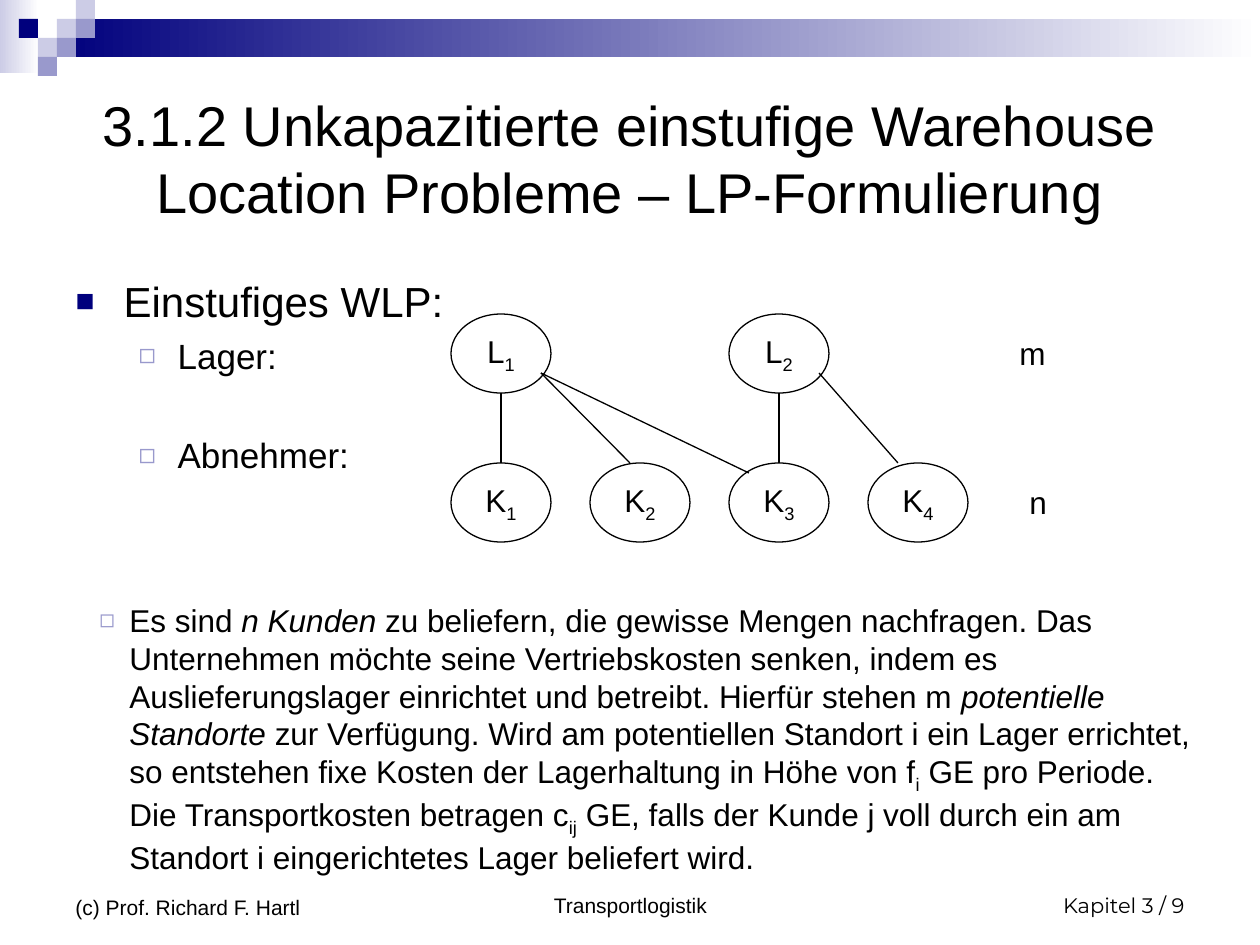
from dataclasses import dataclass

from lxml.etree import SubElement
from pptx import Presentation
from pptx.dml.color import RGBColor
from pptx.enum.shapes import MSO_CONNECTOR, MSO_SHAPE
from pptx.enum.text import MSO_ANCHOR, MSO_AUTO_SIZE, PP_ALIGN
from pptx.oxml.ns import qn
from pptx.util import Emu, Pt


@dataclass(frozen=True)
class Theme:
    navy: str = "00007D"
    violet: str = "9999CC"
    lilac: str = "CCCCE6"
    white: str = "FFFFFF"
    ink: str = "000000"
    font: str = "Arial"
    number_font: str = "Montserrat"
    title: int = 32
    level_1: int = 24
    level_2: int = 20
    text: int = 18
    footer: int = 12
    line: float = 0.75


THEME = Theme()
PX_PER_INCH = 126
SQUARE = ("■", THEME.navy, 75)
HOLLOW = ("◻", THEME.violet, 80)


def px(value):
    return Emu(round(value * 914400 / PX_PER_INCH))


def color(code):
    return RGBColor.from_string(code)


def place(shape, box):
    for name, value in zip(("left", "top", "width", "height"), box):
        setattr(shape, name, px(value))


def format_frame(frame, **values):
    """Set text frame attributes over the common defaults."""
    defaults = {"word_wrap": True, "auto_size": MSO_AUTO_SIZE.NONE}
    for name, value in (defaults | values).items():
        setattr(frame, name, value)


def write(paragraph, parts, size, font=THEME.font, align=PP_ALIGN.LEFT, before=0):
    """Fill a paragraph from (text, style) parts; style is "", "italic" or "sub"."""
    paragraph.alignment = align
    paragraph.space_before = Pt(before)
    for text, style in parts:
        run = paragraph.add_run()
        run.text = text
        values = {"name": font, "size": Pt(size), "italic": style == "italic"}
        for name, value in values.items():
            setattr(run.font, name, value)
        run.font.color.rgb = color(THEME.ink)
        if style == "sub":
            run._r.get_or_add_rPr().set("baseline", "-25000")


def set_bullet(paragraph, bullet, margin, hanging):
    character, code, percent = bullet
    properties = paragraph._p.get_or_add_pPr()
    properties.set("marL", str(px(margin)))
    properties.set("indent", str(px(-hanging)))
    bullet_color = SubElement(properties, qn("a:buClr"))
    SubElement(bullet_color, qn("a:srgbClr"), val=code)
    SubElement(properties, qn("a:buSzPct"), val=str(percent * 1000))
    SubElement(properties, qn("a:buFont"), typeface=THEME.font)
    SubElement(properties, qn("a:buChar"), char=character)


def add_label(slide, box, text, size, font=THEME.font, align=PP_ALIGN.LEFT, **frame_values):
    shape = slide.shapes.add_textbox(*map(px, box))
    format_frame(shape.text_frame, **frame_values)
    write(shape.text_frame.paragraphs[0], [(text, "")], size, font, align)


def add_block(slide, box, *codes):
    """Add a borderless rectangle: one colour is solid, two make a gradient."""
    block = slide.shapes.add_shape(MSO_SHAPE.RECTANGLE, *map(px, box))
    block.shadow.inherit = False
    block.line.fill.background()
    if len(codes) == 1:
        block.fill.solid()
        block.fill.fore_color.rgb = color(codes[0])
        return
    block.fill.gradient()
    block.fill.gradient_angle = 0
    for stop, code in zip(block.fill.gradient_stops, codes):
        stop.color.rgb = color(code)


def add_header(slide, left, top, width):
    cell = 19
    add_block(slide, (left, top, 39, 73), THEME.lilac, THEME.white)
    add_block(slide, (left + 3 * cell, top + cell, width - 3 * cell, 2 * cell),
              THEME.navy, THEME.white)
    mosaic = [(3, 1, THEME.lilac), (4, 0, THEME.lilac), (4, 1, THEME.violet),
              (2, 2, THEME.lilac), (1, 1, THEME.navy), (3, 2, THEME.violet),
              (2, 3, THEME.violet)]
    for column, row, code in mosaic:
        add_block(slide, (left + column * cell, top + row * cell, cell, cell), code)


def add_footer(slide, left, top):
    anchor = {"vertical_anchor": MSO_ANCHOR.BOTTOM}
    add_label(slide, (left, top, 294, 65), "(c) Prof. Richard F. Hartl",
              THEME.footer, **anchor)
    add_label(slide, (left + 368, top, 399, 63), "Transportlogistik",
              THEME.footer, align=PP_ALIGN.CENTER, **anchor)
    add_label(slide, (left + 840, top, 294, 63), "Kapitel 3 / 9",
              THEME.footer, THEME.number_font, PP_ALIGN.RIGHT, **anchor)


def fill_title(title, box):
    place(title, box)
    format_frame(title.text_frame, vertical_anchor=MSO_ANCHOR.MIDDLE)
    text = "3.1.2 Unkapazitierte einstufige Warehouse Location Probleme – LP-Formulierung"
    write(title.text_frame.paragraphs[0], [(text, "")], THEME.title, align=PP_ALIGN.CENTER)


def fill_outline(body, box):
    place(body, box)
    frame = body.text_frame
    format_frame(frame, margin_top=px(10))
    items = [("Einstufiges WLP:", 0, 0), ("Lager:", 1, 5), ("Abnehmer:", 1, 33)]
    styles = [(SQUARE, 48, 48, THEME.level_1), (HOLLOW, 102, 39, THEME.level_2)]
    for index, (text, level, before) in enumerate(items):
        paragraph = frame.add_paragraph() if index else frame.paragraphs[0]
        paragraph.level = level
        bullet, margin, hanging, size = styles[level]
        set_bullet(paragraph, bullet, margin, hanging)
        write(paragraph, [(text, "")], size, before=before)


def add_node(slide, box, letter, number):
    node = slide.shapes.add_shape(MSO_SHAPE.OVAL, *map(px, box))
    node.shadow.inherit = False
    node.fill.background()
    node.line.color.rgb = color(THEME.ink)
    node.line.width = Pt(THEME.line)
    format_frame(node.text_frame, word_wrap=False, vertical_anchor=MSO_ANCHOR.MIDDLE)
    write(node.text_frame.paragraphs[0], [(letter, ""), (str(number), "sub")],
          THEME.text, align=PP_ALIGN.CENTER)
    return node


def add_edge(slide, start, end):
    edge = slide.shapes.add_connector(MSO_CONNECTOR.STRAIGHT, *map(px, start + end))
    edge.line.color.rgb = color(THEME.ink)
    edge.line.width = Pt(THEME.line)
    SubElement(edge._element.spPr, qn("a:effectLst"))
    return edge


def add_network(slide, left, top):
    """Draw warehouses L above customers K, with their supply edges."""
    width, height, column_step, row_step = 100, 79, 139, 149
    columns = [left + column_step * index for index in range(4)]
    customer_top = top + row_step
    customers = [add_node(slide, (x, customer_top, width, height), "K", number)
                 for number, x in enumerate(columns, 1)]
    for number, column in enumerate((0, 2), 1):
        x = columns[column]
        add_node(slide, (x, top, width, height), "L", number)
        middle = x + width // 2
        edge = add_edge(slide, (middle, top + height), (middle, customer_top))
        edge.end_connect(customers[column], 0)
    for source, target, across, down in [(0, 1, 40, 0), (0, 2, 20, 10), (2, 3, 30, 0)]:
        add_edge(slide, (columns[source] + 90, top + 59),
                 (columns[target] + across, customer_top + down))
    for text, x, y in [("m", left + 556, top + 10), ("n", left + 566, customer_top + 10)]:
        add_label(slide, (x, y, 49, 50), text, THEME.text, margin_top=px(10))


def add_description(slide, box):
    shape = slide.shapes.add_textbox(*map(px, box))
    format_frame(shape.text_frame, margin_top=px(10))
    paragraph = shape.text_frame.paragraphs[0]
    paragraph.level = 1
    set_bullet(paragraph, HOLLOW, 63, 30)
    write(paragraph, [
        ("Es sind ", ""), ("n Kunden", "italic"),
        (" zu beliefern, die gewisse Mengen nachfragen. Das Unternehmen möchte seine "
         "Vertriebskosten senken, indem es Auslieferungslager einrichtet und betreibt. "
         "Hierfür stehen m ", ""),
        ("potentielle Standorte", "italic"),
        (" zur Verfügung. Wird am potentiellen Standort i ein Lager errichtet, so "
         "entstehen fixe Kosten der Lagerhaltung in Höhe von f", ""),
        ("i", "sub"), (" GE pro Periode. Die Transportkosten betragen c", ""), ("ij", "sub"),
        (" GE, falls der Kunde j voll durch ein am Standort i eingerichtetes Lager "
         "beliefert wird.", ""),
    ], THEME.text)


def main():
    presentation = Presentation()
    presentation.slide_width, presentation.slide_height = px(1260), px(945)
    slide = presentation.slides.add_slide(presentation.slide_layouts[1])
    add_header(slide, 0, 0, 1260)
    add_footer(slide, 63, 861)
    fill_title(slide.shapes.title, (63, 63, 1134, 189))
    fill_outline(slide.placeholders[1], (63, 265, 1134, 317))
    add_network(slide, 451, 314)
    add_description(slide, (54, 591, 1152, 277))
    presentation.save("out.pptx")


if __name__ == "__main__":
    main()
